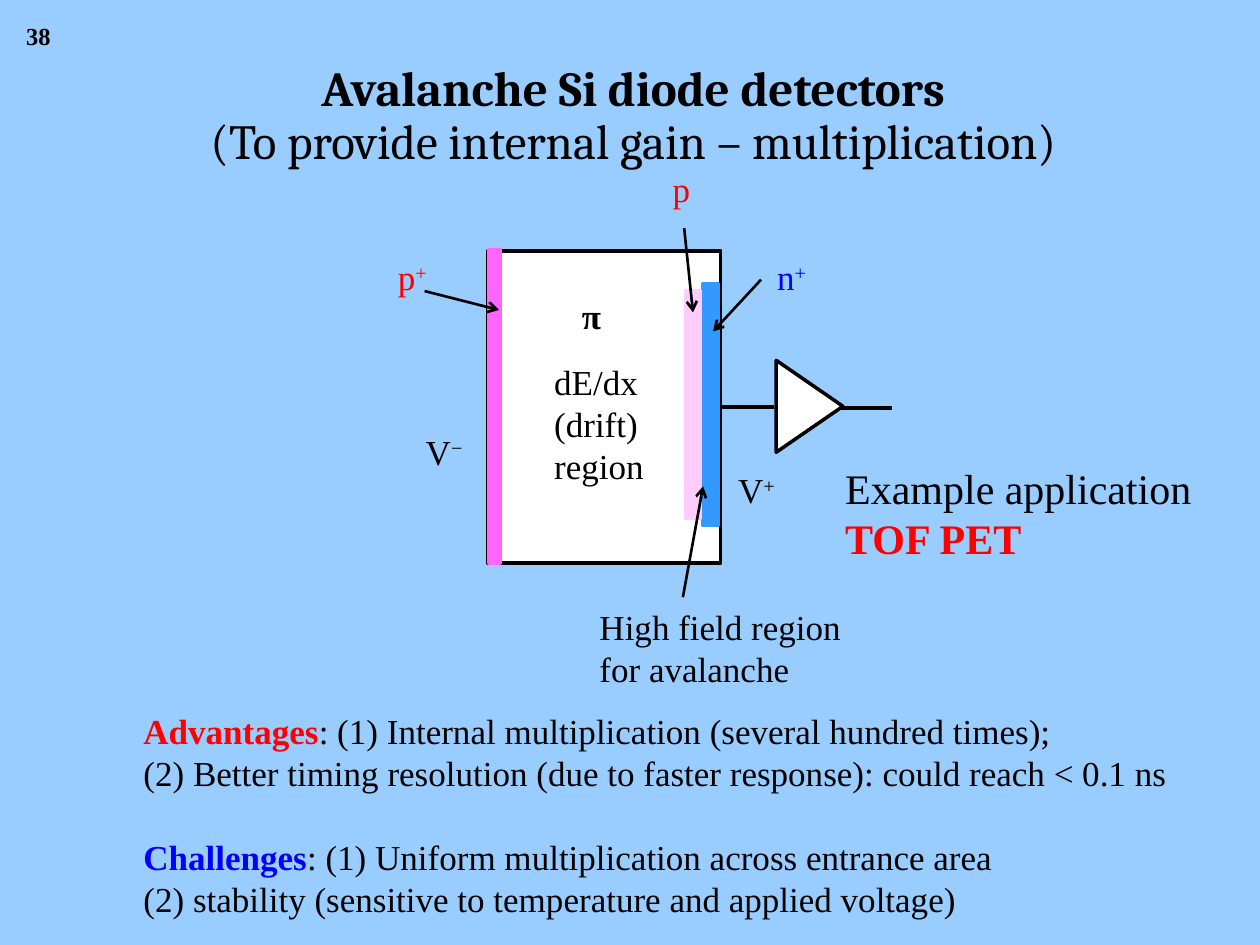
from lxml import etree
from pptx import Presentation
from pptx import util as u
from pptx.dml.color import RGBColor
from pptx.enum import shapes, text
from pptx.oxml.ns import qn

BLACK = RGBColor(0, 0, 0)
NUMBER_BLACK = RGBColor(0x02, 0x01, 0x00)
WHITE = RGBColor(0xFF, 0xFF, 0xFF)
RED = RGBColor(0xFF, 0, 0)
BLUE = RGBColor(0, 0, 0xFF)
SKY = RGBColor(0x99, 0xCC, 0xFF)
N_BLUE = RGBColor(0x33, 0x99, 0xFF)
PALE_PINK = RGBColor(0xFF, 0xCC, 0xFF)
PINK = RGBColor(0xFF, 0x66, 0xFF)
SERIF, HEADING = "Times New Roman", "Cambria"

# The slide is a grid of 100 columns by 75 rows of square cells.
COLUMNS, ROWS = 100, 75
CELL = u.Inches(10) // COLUMNS

# A span is (words, colour, style); style is "", "bold" or "super".
TITLE = [[("Avalanche Si diode detectors", BLACK, "bold")],
         [("(To provide internal gain – multiplication)", BLACK, "")]]
TITLE_AREA = (6.3, 4.6, 87.9, 9.4)

# (left, top, width, height), size, paragraphs
LABELS = [
    ((1.1, 1.2, 4.2, 3.3), 14, [[("38", NUMBER_BLACK, "bold")]]),
    ((60.7, 19.8, 4.5, 4.4), 20, [[("n", BLUE, ""), ("+", BLUE, "super")]]),
    ((52.4, 12.8, 3.4, 4.4), 20, [[("p", RED, "")]]),
    ((30.6, 19.8, 4.5, 4.4), 20, [[("p", RED, ""), ("+", RED, "super")]]),
    ((45.2, 22.9, 3.6, 4.4), 20, [[("π", BLACK, "bold")]]),
    ((43, 28.1, 9.2, 11.1), 20, [[("dE/dx", BLACK, "")],
                                 [("(drift)", BLACK, "")],
                                 [("region", BLACK, "")]]),
    ((57.6, 36.7, 5.1, 4.4), 20, [[("V", BLACK, ""), ("+", BLACK, "super")]]),
    ((32.8, 33.7, 5.1, 4.4), 20, [[("V", BLACK, ""), ("−", BLACK, "super")]]),
    ((46.6, 47.6, 22, 7.7), 20, [[("High field region", BLACK, "")],
                                 [("for avalanche", BLACK, "")]]),
    ((66.1, 36.2, 31.5, 9.1), 24, [[("Example application", BLACK, "")],
                                   [("TOF PET", RED, "bold")]]),
]
SUMMARY_AREA = (10.4, 55.8, 83.7, 17.8)
SUMMARY = [
    [("Advantages", RED, "bold"),
     (": (1) Internal multiplication (several hundred times);", BLACK, "")],
    [("(2) Better timing resolution (due to faster response): "
      "could reach < 0.1 ns", BLACK, "")],
    [("Challenges", BLUE, "bold"),
     (": (1) Uniform multiplication across entrance area", BLACK, "")],
    [("(2) stability (sensitive to temperature and applied voltage)", BLACK, "")],
]
CHALLENGES = 2

RECTANGLE = shapes.MSO_SHAPE.RECTANGLE
TRIANGLE = shapes.MSO_SHAPE.ISOSCELES_TRIANGLE
# kind, area, fill, outline, rotation
DIODE_PARTS = [
    (RECTANGLE, (38.7, 19.9, 18.5, 24.8), WHITE, BLACK, 0),
    (RECTANGLE, (55.8, 22.5, 1.2, 19.2), N_BLUE, N_BLUE, 0),
    (RECTANGLE, (54.4, 23.1, 1.2, 18), PALE_PINK, PALE_PINK, 0),
    (RECTANGLE, (38.8, 19.8, 0.9, 24.9), PINK, PINK, 0),
    (TRIANGLE, (60.6, 29.6, 7.3, 5.3), WHITE, BLACK, 90),
]
WIRES = [(57.3, 32.3, 61.4, 32.3), (66.7, 32.4, 70.8, 32.4)]
POINTERS = [(60.4, 22.2, 56.6, 26.3), (54.2, 47.4, 55.8, 38.6),
            (33.7, 23.1, 39.6, 24.6), (54.3, 18.1, 55, 24.8)]


def cells(values):
    return [round(value * CELL) for value in values]


def add_span(para, words, size, color, style, face):
    span = para.add_run()
    span.text = words
    font = span.font
    font.name, font.size, font.bold = face, u.Pt(size), style == "bold"
    font.color.rgb = color
    if style == "super":
        font._element.set("baseline", "30000")


def add_text(page, area, size, paragraphs, wrap=False):
    frame = page.shapes.add_textbox(*cells(area)).text_frame
    frame.word_wrap = wrap
    for index, spans in enumerate(paragraphs):
        para = frame.add_paragraph() if index else frame.paragraphs[0]
        for words, color, style in spans:
            add_span(para, words, size, color, style, SERIF)
    return frame


def add_title(page):
    frame = page.shapes.add_textbox(*cells(TITLE_AREA)).text_frame
    frame.word_wrap = True
    frame.vertical_anchor = text.MSO_ANCHOR.MIDDLE
    para = frame.paragraphs[0]
    para.alignment = text.PP_ALIGN.CENTER
    para.line_spacing = 0.9
    for index, spans in enumerate(TITLE):
        if index:
            para.add_line_break()
        for words, color, style in spans:
            add_span(para, words, 28, color, style, HEADING)


def add_part(page, kind, area, fill, outline, rotation):
    part = page.shapes.add_shape(kind, *cells(area))
    part.shadow.inherit = False
    part.rotation = rotation
    part.fill.solid()
    part.fill.fore_color.rgb = fill
    part.line.color.rgb = outline
    part.line.width = u.Pt(2)


def add_line(page, ends, width, arrow=False):
    line = page.shapes.add_connector(shapes.MSO_CONNECTOR.STRAIGHT, *cells(ends))
    line.line.color.rgb = BLACK
    line.line.width = u.Pt(width)
    if arrow:
        etree.SubElement(line.line._get_or_add_ln(), qn("a:tailEnd"), type="arrow")
    etree.SubElement(line._element.spPr, qn("a:effectLst"))


def main():
    deck = Presentation()
    deck.slide_width, deck.slide_height = COLUMNS * CELL, ROWS * CELL
    page = deck.slides.add_slide(deck.slide_layouts[6])
    page.background.fill.solid()
    page.background.fill.fore_color.rgb = SKY

    add_title(page)
    for part in DIODE_PARTS:
        add_part(page, *part)
    for ends in WIRES:
        add_line(page, ends, 2)
    for ends in POINTERS:
        add_line(page, ends, 1.5, arrow=True)
    for label in LABELS:
        add_text(page, *label)
    summary = add_text(page, SUMMARY_AREA, 20, SUMMARY, wrap=True)
    summary.paragraphs[CHALLENGES].space_before = u.Pt(24)
    deck.save("out.pptx")


if __name__ == "__main__":
    main()
